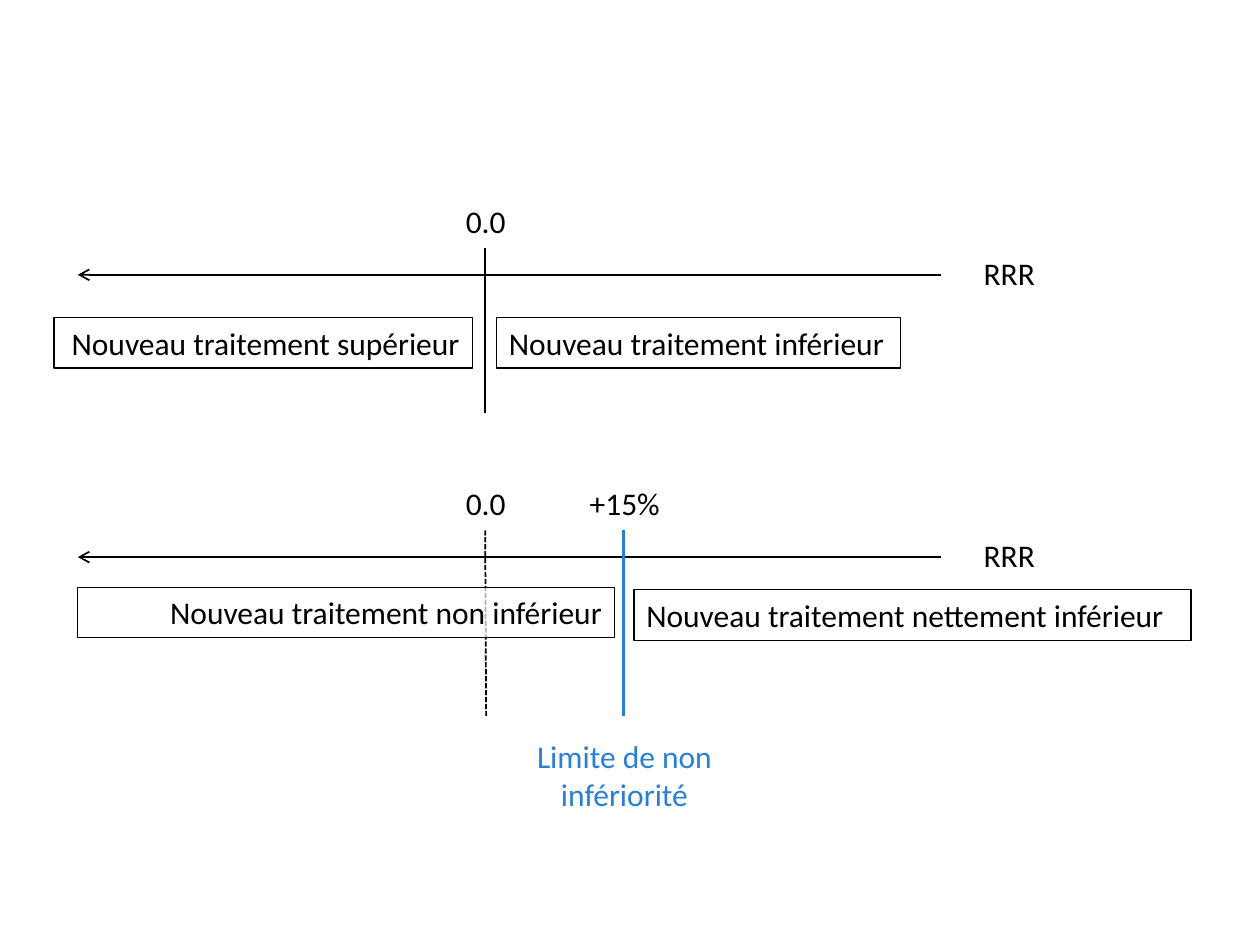
from lxml import etree
from pptx import Presentation
from pptx.dml.color import RGBColor
from pptx.enum import dml, shapes, text
from pptx.oxml.ns import qn
from pptx.util import Cm, Pt

COLORS = {"ink": "000000", "limit": "297FD5", "paper": "FFFFFF"}
LEFT, CENTER, RIGHT = text.PP_ALIGN.LEFT, text.PP_ALIGN.CENTER, text.PP_ALIGN.RIGHT

deck = Presentation()
deck.slide_width, deck.slide_height = Cm(25.4), Cm(19.05)
slide = deck.slides.add_slide(deck.slide_layouts[6])


def add_line(x1, y1, x2, y2, color="ink", width=1):
    line = slide.shapes.add_connector(
        shapes.MSO_CONNECTOR.STRAIGHT, Cm(x1), Cm(y1), Cm(x2), Cm(y2))
    line.line.color.rgb = RGBColor.from_string(COLORS[color])
    line.line.width = Pt(width)
    etree.SubElement(line._element.spPr, qn("a:effectLst"))
    return line


def add_label(words, x, y, width, height=1.02, align=LEFT, color="ink", wrap=False):
    label = slide.shapes.add_textbox(Cm(x), Cm(y), Cm(width), Cm(height))
    frame = label.text_frame
    frame.word_wrap = wrap
    frame.auto_size = text.MSO_AUTO_SIZE.SHAPE_TO_FIT_TEXT
    paragraph = frame.paragraphs[0]
    paragraph.text = words
    paragraph.alignment = align
    paragraph.font.name = "Calibri"
    paragraph.font.size = Pt(18)
    paragraph.font.color.rgb = RGBColor.from_string(COLORS[color])
    return label


for axis_y in (5.54, 11.23):
    axis = add_line(18.97, axis_y, 1.57, axis_y)
    arrowhead = etree.Element(qn("a:tailEnd"), type="arrow")
    axis.line._get_or_add_ln().append(arrowhead)
    add_label("RRR", 19.58, axis_y - 0.54, 1.55)
    add_label("0.0", 9.14, axis_y - 1.6, 1.32)

add_line(9.78, 5, 9.78, 8.33)
zero_reference = add_line(9.78, 10.69, 9.8, 14.43)
zero_reference.line.dash_style = dml.MSO_LINE.SQUARE_DOT
add_line(12.57, 10.69, 12.57, 14.43, "limit", 2)
add_label("+15%", 11.63, 9.63, 1.93, align=CENTER)
add_label("Limite de non infériorité", 10.52, 14.73, 4.14, 1.8, CENTER, "limit", True)

outcomes = [
    ("Nouveau traitement supérieur", 1.09, 6.4, 8.43, RIGHT),
    ("Nouveau traitement inférieur", 10.01, 6.4, 8.15, LEFT),
    ("Nouveau traitement non inférieur", 1.57, 11.84, 10.82, RIGHT),
    ("Nouveau traitement nettement inférieur", 12.78, 11.89, 11.23, LEFT),
]
for words, x, y, width, align in outcomes:
    outcome = add_label(words, x, y, width, align=align)
    outcome.line.color.rgb = RGBColor.from_string(COLORS["ink"])
    outcome.line.width = Pt(0.75)
    if "non inférieur" in words:
        outcome.text_frame.word_wrap = True
        outcome.fill.solid()
        outcome.fill.fore_color.rgb = RGBColor.from_string(COLORS["paper"])
        veil = outcome._element.spPr.find(qn("a:solidFill")).find(qn("a:srgbClr"))
        etree.SubElement(veil, qn("a:alpha"), val="69000")

deck.save("out.pptx")
